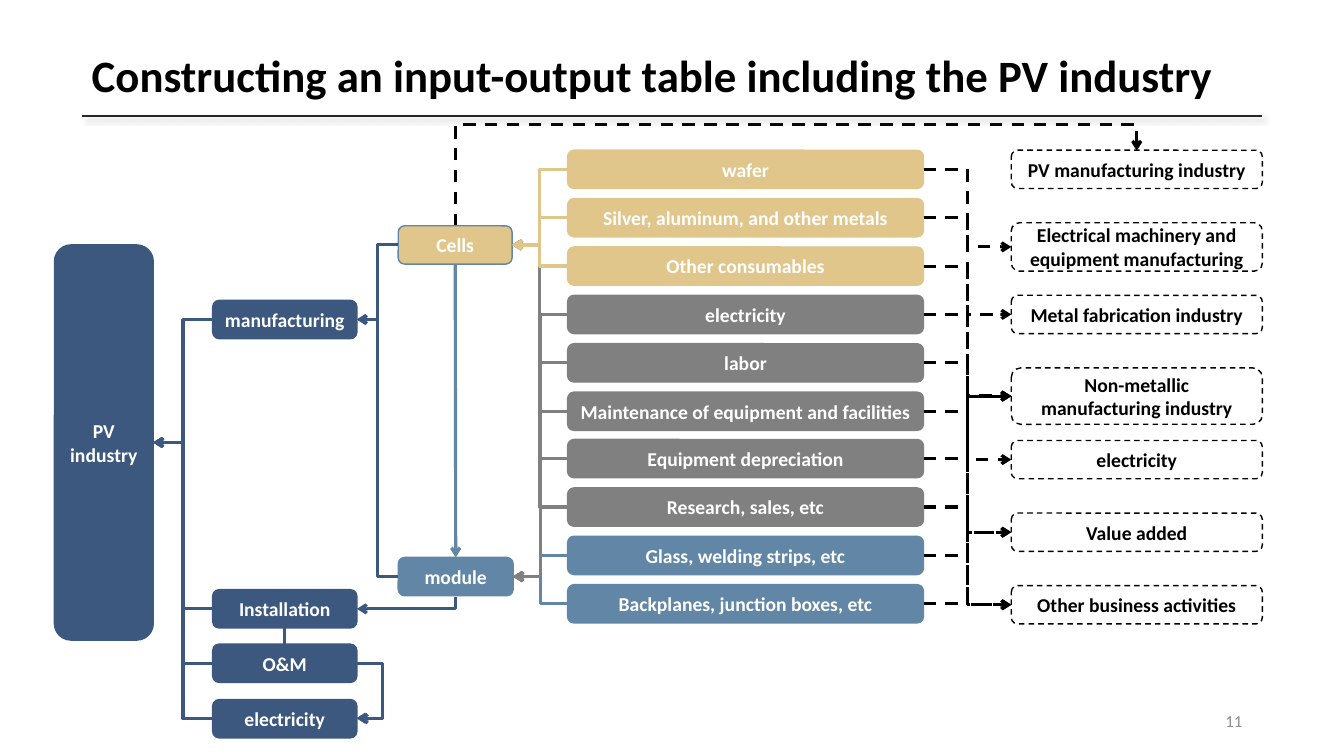
from lxml import etree
from pptx import Presentation
from pptx import util as u
from pptx.dml.color import RGBColor
from pptx.enum import dml, shapes, text
from pptx.oxml.ns import qn

PX = 9144
NAVY, BLUE, GOLD, GREY = "3C587F", "6286A6", "E0C68B", "808080"
BLACK, WHITE = "000000", "FFFFFF"
ELBOW, STRAIGHT = shapes.MSO_CONNECTOR.ELBOW, shapes.MSO_CONNECTOR.STRAIGHT
TOP, LEFT, BOTTOM, RIGHT = range(4)
rgb = RGBColor.from_string

prs = Presentation()
prs.slide_width, prs.slide_height = 1333 * PX, 750 * PX
s = prs.slides.add_slide(prs.slide_layouts[5])


def box(label, x, y, w, h, fill, line):
    sp = s.shapes.add_shape(shapes.MSO_SHAPE.ROUNDED_RECTANGLE, x * PX, y * PX, w * PX, h * PX)
    sp.shadow.inherit = False
    sp.line.color.rgb = rgb(line)
    sp.line.width = u.Pt(1)
    if fill:
        sp.fill.solid()
        sp.fill.fore_color.rgb = rgb(fill)
    else:
        sp.fill.background()
        sp.line.dash_style = dml.MSO_LINE.DASH
    tf = sp.text_frame
    tf.word_wrap = True
    tf.vertical_anchor = text.MSO_ANCHOR.MIDDLE
    for i, words in enumerate(label.split("\n")):
        p = tf.add_paragraph() if i else tf.paragraphs[0]
        p.alignment = text.PP_ALIGN.CENTER
        r = p.add_run()
        r.text = words
        r.font.name, r.font.size, r.font.bold = "Calibri", u.Pt(14), True
        r.font.color.rgb = rgb(WHITE if fill else BLACK)
    return sp


def link(color, start=None, end=None, kind=ELBOW, ends=(0, 0, 0, 0), dash=False, arrow=True, width=2.25):
    c = s.shapes.add_connector(kind, *[v * PX for v in ends])
    if start:
        c.begin_connect(*start)
        c.end_connect(*end)
    c.line.color.rgb = rgb(color)
    c.line.width = u.Pt(width)
    if dash:
        c.line.dash_style = dml.MSO_LINE.DASH
    if arrow:
        etree.SubElement(c.line._get_or_add_ln(), qn("a:tailEnd"), type="arrow")
    etree.SubElement(c.element.spPr, qn("a:effectLst"))
    return c


routes = [
    ("bentConnector4", NAVY, (273, 632, 90, 71), 90, True, (39400, 136500)),
    ("bentConnector3", BLACK, (752, -151, 75, 676), 270, False, (134900,)),
    ("bentConnector2", NAVY, (397, 549, 12, 98), 90, False, ()),
    ("bentConnector3", NAVY, (354, 658, 1, 55), 0, False, (2600000,)),
]
for preset, color, (x, y, w, h), turn, flip, adjusts in routes:
    c = link(color, ends=(x, y, x + w, y + h), dash=color == BLACK)
    xfrm = c.element.spPr.find(qn("a:xfrm"))
    xfrm.set("rot", str(turn * 60000))
    if flip:
        xfrm.set("flipV", "1")
    geom = c.element.spPr.find(qn("a:prstGeom"))
    geom.set("prst", preset)
    guides = geom.find(qn("a:avLst"))
    for n, value in enumerate(adjusts, 1):
        etree.SubElement(guides, qn("a:gd"), name=f"adj{n}", fmla=f"val {value}")

title = s.shapes.title
title.left, title.top, title.width, title.height = 81 * PX, 40 * PX, 1150 * PX, 75 * PX
number = s.shapes.add_textbox(942 * PX, 695 * PX, 300 * PX, 40 * PX)
for sp, words, size, color, bold, align in [
    (title, "Constructing an input-output table including the PV industry", 32, BLACK, True, text.PP_ALIGN.LEFT),
    (number, "11", 12, "8C8C8C", False, text.PP_ALIGN.RIGHT),
]:
    tf = sp.text_frame
    tf.word_wrap = True
    tf.auto_size = text.MSO_AUTO_SIZE.NONE
    tf.vertical_anchor = text.MSO_ANCHOR.MIDDLE
    p = tf.paragraphs[0]
    p.alignment = align
    r = p.add_run()
    r.text = words
    r.font.name, r.font.size, r.font.bold = "Calibri", u.Pt(size), bold
    r.font.color.rgb = rgb(color)
title.text_frame.paragraphs[0].line_spacing = 0.9

rule = link("262626", kind=STRAIGHT, ends=(81, 115, 1252, 115), arrow=False, width=1)
shadow = etree.SubElement(rule.element.spPr.find(qn("a:effectLst")), qn("a:outerShdw"),
                          blurRad=str(u.Pt(4)), dist=str(u.Pt(3)), dir=str(45 * 60000))
tint = etree.SubElement(shadow, qn("a:srgbClr"), val=GREY)
etree.SubElement(tint, qn("a:alpha"), val="40000")

industry = box("PV\nindustry", 54, 243, 98, 392, NAVY, NAVY)
stages = [box(label, 211, y, 143, 38, NAVY, NAVY) for label, y in
          [("manufacturing", 298), ("Installation", 585), ("O&M", 639), ("electricity", 694)]]
module = box("module", 395, 553, 114, 38, BLUE, BLUE)
cells = box("Cells", 395, 224, 113, 38, GOLD, BLUE)

input_rows = [
    ("wafer", GOLD), ("Silver, aluminum, and other metals", GOLD), ("Other consumables", GOLD),
    ("electricity", GREY), ("labor", GREY), ("Maintenance of equipment and facilities", GREY),
    ("Equipment depreciation", GREY), ("Research, sales, etc", GREY),
    ("Glass, welding strips, etc", BLUE), ("Backplanes, junction boxes, etc", BLUE),
]
inputs = [box(label, 563, 149 + round(47.9 * i), 353, 38, color, color)
          for i, (label, color) in enumerate(input_rows)]

sector_rows = [
    ("PV manufacturing industry", 38), ("Electrical machinery and equipment manufacturing", 48),
    ("Metal fabrication industry", 38), ("Non-metallic manufacturing industry", 56),
    ("electricity", 38), ("Value added", 38), ("Other business activities", 38),
]
sectors = [box(label, 1003, 149 + 72 * i, 249, h, None, BLACK)
           for i, (label, h) in enumerate(sector_rows)]

for stage in stages:
    link(NAVY, (stage, LEFT), (industry, RIGHT))
for part in (module, cells):
    link(NAVY, (part, LEFT), (stages[0], RIGHT))
link(BLUE, (cells, BOTTOM), (module, TOP), STRAIGHT)

for i in (6, 3, 4, 5, 7, 0, 1, 2):
    link(NAVY if i == 6 else input_rows[i][1], (inputs[i], LEFT), (cells, RIGHT))
for i in range(9, 2, -1):
    link(input_rows[i][1], (inputs[i], LEFT), (module, RIGHT))
for source, target in zip(inputs, (1, 2, 3, 4, 5, 6, 5, 6, 3, 3)):
    link(BLACK, (source, RIGHT), (sectors[target], LEFT), dash=True)

prs.save("out.pptx")
